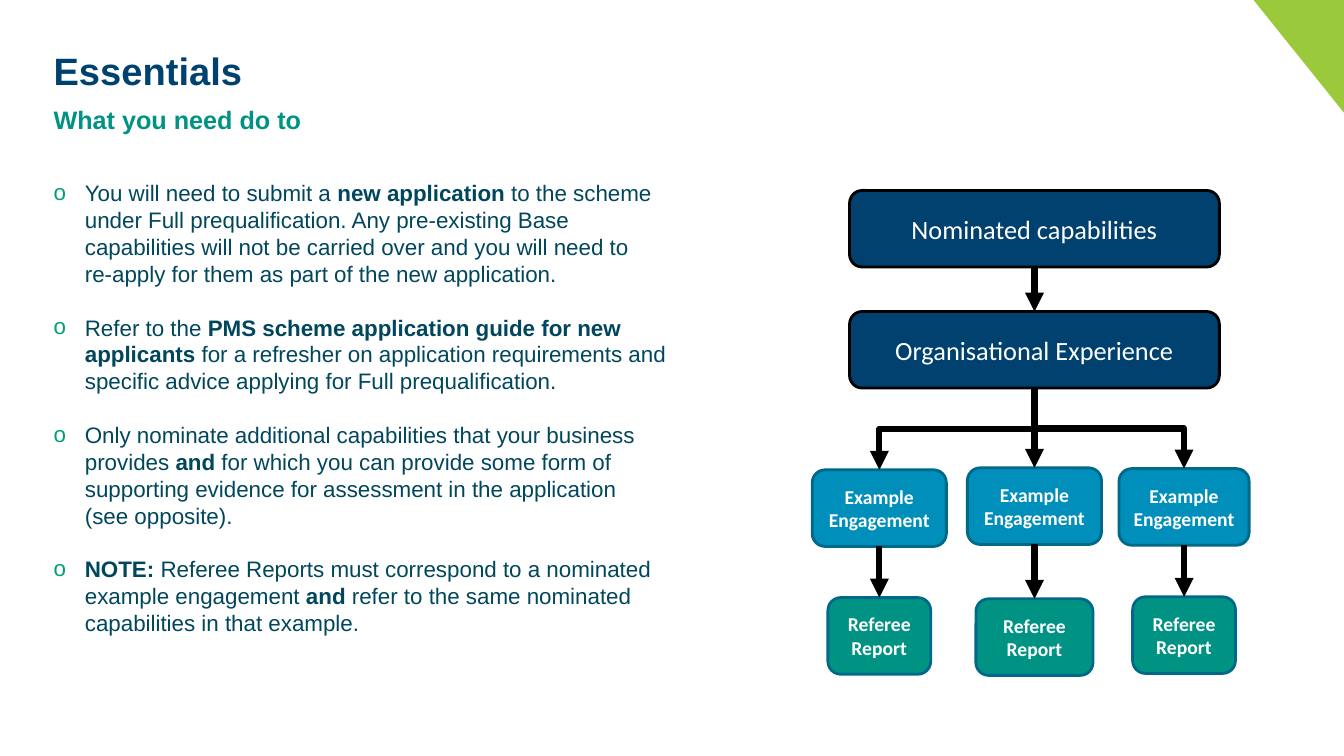
from lxml import etree
from pptx import Presentation
from pptx.dml.color import RGBColor
from pptx.enum.shapes import MSO_CONNECTOR, MSO_SHAPE
from pptx.enum.text import MSO_ANCHOR, MSO_AUTO_SIZE, PP_ALIGN
from pptx.oxml.ns import qn
from pptx.util import Cm, Pt

STRAIGHT, ELBOW = MSO_CONNECTOR.STRAIGHT, MSO_CONNECTOR.ELBOW
ROUNDED = MSO_SHAPE.ROUNDED_RECTANGLE
TOP, MIDDLE = MSO_ANCHOR.TOP, MSO_ANCHOR.MIDDLE
LEFT, CENTER = PP_ALIGN.LEFT, PP_ALIGN.CENTER
NO_AUTOSIZE = MSO_AUTO_SIZE.NONE

NAVY = RGBColor(0x00, 0x41, 0x6F)
TITLE_NAVY = RGBColor(0x00, 0x42, 0x6F)
TEAL = RGBColor(0x00, 0x93, 0x83)
INK = RGBColor(0x00, 0x47, 0x5D)
BLUE = RGBColor(0x00, 0x8E, 0xBA)
EDGE = RGBColor(0x00, 0x69, 0x8A)
LIME = RGBColor(0x9A, 0xCA, 0x3C)
BLACK = RGBColor(0x00, 0x00, 0x00)
WHITE = RGBColor(0xFF, 0xFF, 0xFF)
BULLET_GREEN = "009F7A"


def add_text(p, text, size, color, font="Arial", bold=False, align=LEFT):
    p.alignment = align
    for i, part in enumerate(text.split("**")):
        for j, line in enumerate(part.split("\n")):
            if j:
                p.add_line_break()
            if line:
                r = p.add_run()
                r.text = line
                r.font.name = font
                r.font.size = Pt(size)
                r.font.bold = bold or i % 2 == 1
                r.font.color.rgb = color


prs = Presentation()
prs.slide_width, prs.slide_height = Cm(33.87), Cm(19.05)
s = prs.slides.add_slide(prs.slide_layouts[5])

fb = s.shapes.build_freeform(Cm(33.87), 0)
fb.add_line_segments([(Cm(31.59), 0), (Cm(33.87), Cm(2.84))])
corner = fb.convert_to_shape()
corner.shadow.inherit = False
corner.fill.solid()
corner.fill.fore_color.rgb = LIME
corner.line.fill.background()

title = s.shapes.title
title.left, title.top, title.width, title.height = Cm(1.35), Cm(1.19), Cm(20.78), Cm(1.78)
subtitle = s.shapes.add_textbox(Cm(1.35), Cm(2.62), Cm(30.12), Cm(0.76))
body = s.shapes.add_textbox(Cm(1.35), Cm(4.39), Cm(16.1), Cm(13.46))
for sp in (title, subtitle, body):
    tf = sp.text_frame
    tf.word_wrap = True
    tf.auto_size = NO_AUTOSIZE
    tf.vertical_anchor = TOP
    tf.margin_left = tf.margin_right = tf.margin_top = tf.margin_bottom = 0
add_text(title.text_frame.paragraphs[0], "Essentials", 27.2, TITLE_NAVY, bold=True)
add_text(subtitle.text_frame.paragraphs[0], "What you need do to", 18, TEAL, bold=True)

steps = [
    "You will need to submit a **new application **to the scheme under Full "
    "prequalification. Any pre-existing Base capabilities will not be carried over "
    "and you will need to \nre-apply for them as part of the new application.",
    "Refer to the **PMS scheme application guide for new applicants **for a refresher "
    "on application requirements and specific advice applying for Full prequalification.",
    "Only nominate additional capabilities that your business provides **and **for which "
    "you can provide some form of supporting evidence for assessment in the application "
    "\n(see opposite).",
    "**NOTE: **Referee Reports must correspond to a nominated example engagement **and** "
    "refer to the same nominated capabilities in that example.",
]
tf = body.text_frame
tf.margin_top = tf.margin_bottom = Cm(0.13)
tf.margin_right = Cm(0.25)
for i, step in enumerate(steps):
    p = tf.add_paragraph() if i else tf.paragraphs[0]
    add_text(p, step, 16, INK)
    p.line_spacing = Pt(19.2)
    p.space_after = Pt(19.2)
    pPr = p._p.get_or_add_pPr()
    pPr.set("marL", str(Cm(0.79)))
    pPr.set("indent", str(-Cm(0.79)))
    bullet_color = etree.SubElement(pPr, qn("a:buClr"))
    etree.SubElement(bullet_color, qn("a:srgbClr"), val=BULLET_GREEN)
    etree.SubElement(pPr, qn("a:buFont"), typeface="Arial")
    etree.SubElement(pPr, qn("a:buChar"), char="o")

BOX_H = 1.93
MID_X, CAPABILITIES_Y, EXPERIENCE_Y = 26.07, 4.8, 7.85
boxes = [
    ("Nominated capabilities", MID_X, CAPABILITIES_Y, 9.32, NAVY, BLACK, 18.8, False),
    ("Organisational Experience", MID_X, EXPERIENCE_Y, 9.32, NAVY, BLACK, 18.8, False),
]
arrows = [(MID_X, CAPABILITIES_Y + BOX_H, MID_X, EXPERIENCE_Y)]
columns = [
    (22.16, 11.84, 3.38, 15.06, 2.59),
    (MID_X, 11.79, 3.38, 15.09, 2.95),
    (29.84, 11.81, 3.28, 15.04, 2.59),
]
for x, example_y, example_w, report_y, report_w in columns:
    boxes.append(("Example\nEngagement", x, example_y, example_w, BLUE, EDGE, 14, True))
    boxes.append(("Referee Report", x, report_y, report_w, TEAL, EDGE, 14, True))
    arrows.append((MID_X, EXPERIENCE_Y + BOX_H, x, example_y))
    arrows.append((x, example_y + BOX_H, x, report_y))

for text, x, y, w, fill, edge, size, bold in boxes:
    sp = s.shapes.add_shape(ROUNDED, Cm(x - w / 2), Cm(y), Cm(w), Cm(BOX_H))
    sp.shadow.inherit = False
    sp.fill.solid()
    sp.fill.fore_color.rgb = fill
    sp.line.color.rgb = edge
    sp.line.width = Pt(2)
    tf = sp.text_frame
    tf.word_wrap = True
    tf.vertical_anchor = MIDDLE
    add_text(tf.paragraphs[0], text, size, WHITE, font="Calibri", bold=bold, align=CENTER)

for x1, y1, x2, y2 in arrows:
    if x1 == x2:
        arrow = s.shapes.add_connector(STRAIGHT, Cm(x1), Cm(y1), Cm(x2), Cm(y2))
    else:
        side = 1 if x2 < x1 else -1
        cx, cy = (x1 + x2) / 2, (y1 + y2) / 2
        half_w, half_h = side * (y2 - y1) / 2, abs(x2 - x1) / 2
        arrow = s.shapes.add_connector(
            ELBOW, Cm(cx - half_w), Cm(cy - half_h), Cm(cx + half_w), Cm(cy + half_h))
        xfrm = arrow._element.spPr.find(qn("a:xfrm"))
        xfrm.set("rot", str(side * 90 % 360 * 60000))
    arrow.line.color.rgb = BLACK
    arrow.line.width = Pt(4.5)
    etree.SubElement(arrow.line._get_or_add_ln(), qn("a:tailEnd"), type="triangle")
    etree.SubElement(arrow._element.spPr, qn("a:effectLst"))

prs.save("out.pptx")
